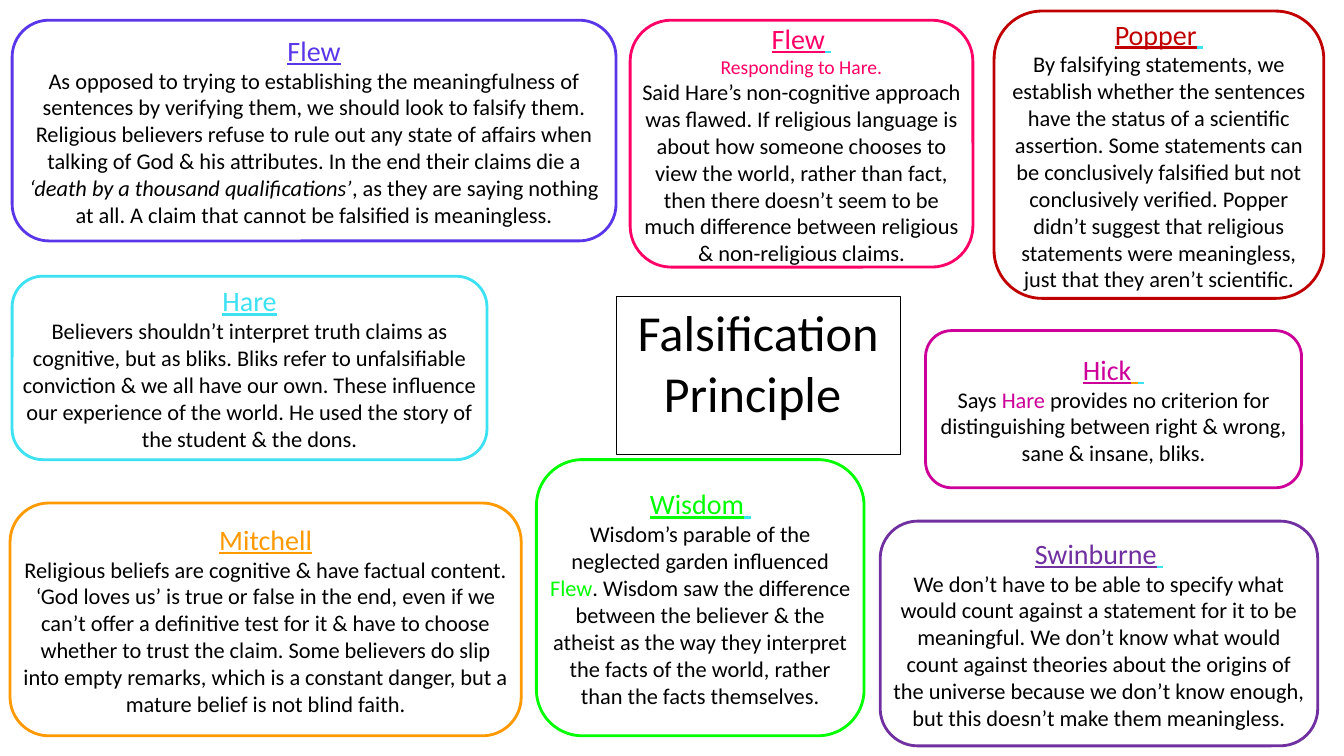
import pptx
import pptx.util
import pptx.dml.color
import pptx.enum.shapes
import pptx.enum.text

Inches = pptx.util.Inches
Pt = pptx.util.Pt
RGBColor = pptx.dml.color.RGBColor

BLACK = RGBColor(0x00, 0x00, 0x00)
INDIGO = RGBColor(0x59, 0x37, 0xE9)
CYAN = RGBColor(0x3C, 0xE1, 0xF2)
GREEN = RGBColor(0x00, 0xFF, 0x00)
MAGENTA = RGBColor(0xCC, 0x00, 0x99)
RED = RGBColor(0xC0, 0x00, 0x00)
PINK = RGBColor(0xFF, 0x00, 0x66)
PURPLE = RGBColor(0x70, 0x30, 0xA0)
ORANGE = RGBColor(0xFF, 0x99, 0x00)

TITLE = {"name": "Calibri", "size": Pt(36)}
HEADING = {"name": "Calibri", "size": Pt(20), "underline": True}
SUBHEADING = {"name": "Calibri", "size": Pt(14)}
BODY = {"name": "Calibri", "size": Pt(16)}
QUOTE = {**BODY, "italic": True}

# Each scholar: box (left, top, width, height), outline colour,
# then paragraphs made of (text, format, colour) spans
SCHOLARS = [
    ((0.12, 0.2, 5.99, 2.19), INDIGO, [
        [("Flew", HEADING, INDIGO)],
        [("As opposed to trying to establishing the meaningfulness of sentences by "
          "verifying them, we should look to falsify them. Religious believers refuse "
          "to rule out any state of affairs when talking of God & his attributes. "
          "In the end their claims die a ", BODY, BLACK),
         ("‘death by a thousand qualifications’", QUOTE, BLACK),
         (", as they are saying nothing at all. A claim that cannot be falsified "
          "is meaningless.", BODY, BLACK)]]),
    ((0.12, 2.74, 4.71, 1.82), CYAN, [
        [("Hare", HEADING, CYAN)],
        [("Believers shouldn’t interpret truth claims as cognitive, but as bliks. "
          "Bliks refer to unfalsifiable conviction & we all have our own. These "
          "influence our experience of the world. He used the story of the student "
          "& the dons.", BODY, BLACK)]]),
    ((5.32, 4.56, 3.25, 2.74), GREEN, [
        [("Wisdom", HEADING, GREEN), (" ", HEADING, CYAN)],
        [("Wisdom’s parable of the neglected garden influenced ", BODY, BLACK),
         ("Flew", BODY, GREEN),
         (". Wisdom saw the difference between the believer & the atheist as the way "
          "they interpret the facts of the world, rather than the facts themselves.",
          BODY, BLACK)]]),
    ((9.18, 3.28, 3.73, 1.56), MAGENTA, [
        [("Hick", HEADING, MAGENTA), (" ", HEADING, ORANGE), (" ", HEADING, CYAN)],
        [("Says ", BODY, BLACK),
         ("Hare", BODY, MAGENTA),
         (" provides no criterion for distinguishing between right & wrong, sane & "
          "insane, bliks.", BODY, BLACK)]]),
    ((9.86, 0.11, 3.27, 2.85), RED, [
        [("Popper", HEADING, RED), (" ", HEADING, CYAN)],
        [("By falsifying statements, we establish whether the sentences have the "
          "status of a scientific assertion. Some statements can be conclusively "
          "falsified but not conclusively verified. Popper didn’t suggest that "
          "religious statements were meaningless, just that they aren’t scientific.",
          BODY, BLACK)]]),
    ((6.25, 0.2, 3.4, 2.45), PINK, [
        [("Flew", HEADING, PINK), (" ", HEADING, CYAN)],
        [("Responding to Hare.", SUBHEADING, PINK)],
        [("Said Hare’s non-cognitive approach was flawed. If religious language is "
          "about how someone chooses to view the world, rather than fact, then there "
          "doesn’t seem to be much difference between religious & non-religious "
          "claims.", BODY, BLACK)]]),
    ((8.73, 5.17, 4.34, 2.23), PURPLE, [
        [("Swinburne", HEADING, PURPLE), (" ", HEADING, CYAN)],
        [("We don’t have to be able to specify what would count against a statement "
          "for it to be meaningful. We don’t know what would count against theories "
          "about the origins of the universe because we don’t know enough, but this "
          "doesn’t make them meaningless.", BODY, BLACK)]]),
    ((0.1, 4.99, 5.07, 2.31), ORANGE, [
        [("Mitchell", HEADING, ORANGE)],
        [("Religious beliefs are cognitive & have factual content. ‘God loves us’ is "
          "true or false in the end, even if we can’t offer a definitive test for it "
          "& have to choose whether to trust the claim. Some believers do slip into "
          "empty remarks, which is a constant danger, but a mature belief is not "
          "blind faith.", BODY, BLACK)]]),
]


def set_values(target, values):
    for name, value in values.items():
        setattr(target, name, value)


def outline(shape, colour, width):
    shape.fill.background()
    shape.line.color.rgb = colour
    shape.line.width = Pt(width)


def write_paragraphs(frame, paragraphs):
    for index, spans in enumerate(paragraphs):
        para = frame.add_paragraph() if index else frame.paragraphs[0]
        para.alignment = pptx.enum.text.PP_ALIGN.CENTER
        for text, values, colour in spans:
            span = para.add_run()
            span.text = text
            set_values(span.font, values)
            span.font.color.rgb = colour


def place_title(page, box):
    """Outlined topic box in the middle of the page."""
    title = page.shapes.title
    places = map(Inches, box)
    set_values(title, dict(zip(("left", "top", "width", "height"), places)))
    outline(title, BLACK, 0.75)
    set_values(title.text_frame, {
        "word_wrap": True,
        "auto_size": pptx.enum.text.MSO_AUTO_SIZE.SHAPE_TO_FIT_TEXT,
        "vertical_anchor": pptx.enum.text.MSO_ANCHOR.TOP,
    })
    write_paragraphs(title.text_frame, [[("Falsification Principle ", TITLE, BLACK)]])


def add_scholar(page, box, colour, paragraphs):
    """Rounded card with a scholar's name and view."""
    card = page.shapes.add_shape(
        pptx.enum.shapes.MSO_SHAPE.ROUNDED_RECTANGLE, *map(Inches, box))
    card.shadow.inherit = False
    outline(card, colour, 2)
    set_values(card.text_frame, {
        "word_wrap": True,
        "vertical_anchor": pptx.enum.text.MSO_ANCHOR.MIDDLE,
        "margin_left": 0, "margin_top": 0, "margin_right": 0, "margin_bottom": 0,
    })
    write_paragraphs(card.text_frame, paragraphs)


def main():
    deck = pptx.Presentation()
    deck.slide_width = Inches(13.33)
    deck.slide_height = Inches(7.5)
    page = deck.slides.add_slide(deck.slide_layouts.get_by_name("Title Only"))

    # Topic in the centre
    place_title(page, (6.11, 2.94, 2.82, 1.31))

    # Scholars around it
    for box, colour, paragraphs in SCHOLARS:
        add_scholar(page, box, colour, paragraphs)

    deck.save("out.pptx")


if __name__ == "__main__":
    main()
